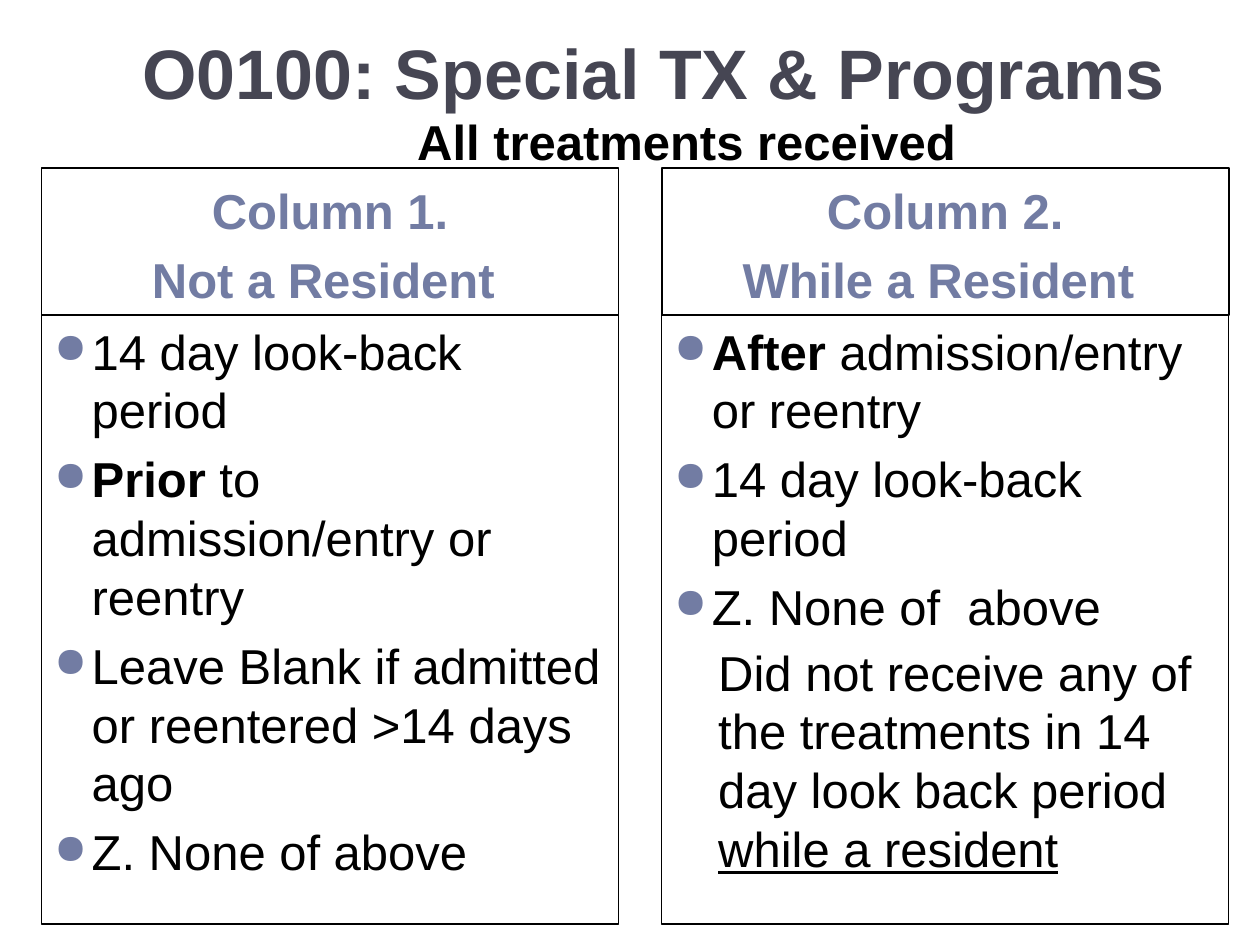
import dataclasses

import pptx
import pptx.dml.color
import pptx.enum.shapes
import pptx.enum.text
import pptx.oxml
import pptx.oxml.ns
import pptx.util
from pptx.util import Cm, Pt

RGB = pptx.dml.color.RGBColor.from_string
ANCHOR = pptx.enum.text.MSO_ANCHOR
CENTER = pptx.enum.text.PP_ALIGN.CENTER


@dataclasses.dataclass(frozen=True)
class Theme:
    """Colours, font and type sizes of the slide."""
    font: str = "Arial"
    heading: str = "464653"
    accent: str = "727CA3"
    ink: str = "000000"
    paper: str = "FFFFFF"
    title_size: float = 40
    text_size: float = 28
    leading: float = 33.6
    item_gap: float = 5.8
    detail_gap: float = 3.8


THEME = Theme()

COLUMNS = [
    {
        "left": 0.84, "width": 11.63, "fill": None,
        "heading": ["Column 1.", "Not a Resident "],
        "items": [
            [("14 day look-back period", {})],
            [("Prior", {"bold": True}), (" to admission/entry or reentry", {})],
            [("Leave Blank if admitted or reentered >14 days ago", {})],
            [("Z. None of above", {})],
        ],
        "detail": [],
    },
    {
        "left": 13.34, "width": 11.43, "fill": THEME.paper,
        "heading": ["Column 2.", "While a Resident "],
        "items": [
            [("After", {"bold": True}), (" admission/entry or reentry", {})],
            [("14 day look-back period", {})],
            [("Z. None of  above", {})],
        ],
        "detail": [
            ("Did not receive any of the treatments in 14 day look back period ", {}),
            ("while a resident", {"underline": True}),
        ],
    },
]


def write(paragraph, text, size=THEME.text_size, color=THEME.ink, bold=False, underline=None):
    """Append a formatted run of text to a paragraph."""
    run = paragraph.add_run()
    run.text = text
    run.font.name = THEME.font
    run.font.size = Pt(size)
    run.font.bold = bold
    run.font.underline = underline
    run.font.color.rgb = RGB(color)


def next_paragraph(frame, gap=0, align=None):
    """Return a fresh paragraph, with space before it unless it is the first."""
    first = frame.paragraphs[0]
    paragraph = frame.add_paragraph() if first.runs else first
    if first.runs:
        paragraph.space_before = Pt(gap)
    paragraph.line_spacing = Pt(THEME.leading)
    paragraph.alignment = align or pptx.enum.text.PP_ALIGN.LEFT
    return paragraph


def indent(paragraph, left, hanging=0, bullet=None):
    """Indent a paragraph and give it a bullet if one is named."""
    properties = paragraph._p.get_or_add_pPr()
    properties.set("marL", str(Cm(left)))
    properties.set("indent", str(-Cm(hanging)))
    if bullet:
        namespace = pptx.oxml.ns.nsdecls("a")
        for markup in (
            f'<a:buClr {namespace}><a:srgbClr val="{THEME.accent}"/></a:buClr>',
            f'<a:buSzPct {namespace} val="85000"/>',
            f'<a:buChar {namespace} char="{bullet}"/>',
        ):
            properties.append(pptx.oxml.parse_xml(markup))


def add_panel(slide, left, top, width, height, line_width, anchor, fill=None):
    """Add an outlined rectangle and return its text frame."""
    panel = slide.shapes.add_shape(
        pptx.enum.shapes.MSO_SHAPE.RECTANGLE, Cm(left), Cm(top), Cm(width), Cm(height))
    panel.shadow.inherit = False
    panel.line.color.rgb = RGB(THEME.ink)
    panel.line.width = Pt(line_width)
    if fill:
        panel.fill.solid()
        panel.fill.fore_color.rgb = RGB(fill)
    else:
        panel.fill.background()
    panel.text_frame.word_wrap = True
    panel.text_frame.vertical_anchor = anchor
    return panel.text_frame


def add_title(slide, text):
    """Place and format the slide title."""
    title = slide.shapes.title
    title.left, title.top, title.width, title.height = Cm(1.07), Cm(0), Cm(23.5), Cm(2.54)
    frame = title.text_frame
    frame.vertical_anchor = ANCHOR.BOTTOM
    frame.margin_left, frame.margin_right = Cm(0.95), Cm(0.25)
    frame.margin_top, frame.margin_bottom = Cm(0.13), Cm(0.25)
    frame.paragraphs[0].alignment = CENTER
    write(frame.paragraphs[0], text, size=THEME.title_size, color=THEME.heading, bold=True)


def add_subtitle(slide, text):
    """Add the line under the title."""
    frame = slide.shapes.add_textbox(Cm(5.72), Cm(2.12), Cm(16.51), Cm(1.45)).text_frame
    frame.word_wrap = True
    write(next_paragraph(frame, align=CENTER), text, bold=True)


def add_column(slide, left, width, fill, heading, items, detail):
    """Add a heading panel above a panel of bulleted items."""
    header = add_panel(slide, left, 3.39, width, 2.96, 1, ANCHOR.BOTTOM, fill)
    for line in heading:
        write(next_paragraph(header, THEME.item_gap, CENTER), line, color=THEME.accent, bold=True)

    body = add_panel(slide, left, 6.35, width, 12.28, 0.75, ANCHOR.TOP, fill)
    for item in items:
        paragraph = next_paragraph(body, THEME.item_gap)
        indent(paragraph, 0.76, 0.76, "●")
        for text, style in item:
            write(paragraph, text, **style)
    if detail:
        paragraph = next_paragraph(body, THEME.detail_gap)
        paragraph.level = 1
        indent(paragraph, 0.89)
        for text, style in detail:
            write(paragraph, text, **style)


def main():
    """Build the slide and save it."""
    deck = pptx.Presentation()
    deck.slide_width, deck.slide_height = Cm(25.4), Cm(19.05)
    slide = deck.slides.add_slide(deck.slide_layouts.get_by_name("Title Only"))
    add_title(slide, "O0100: Special TX & Programs")
    for column in COLUMNS:
        add_column(slide, **column)
    add_subtitle(slide, "All treatments received ")
    deck.save("out.pptx")


if __name__ == "__main__":
    main()
